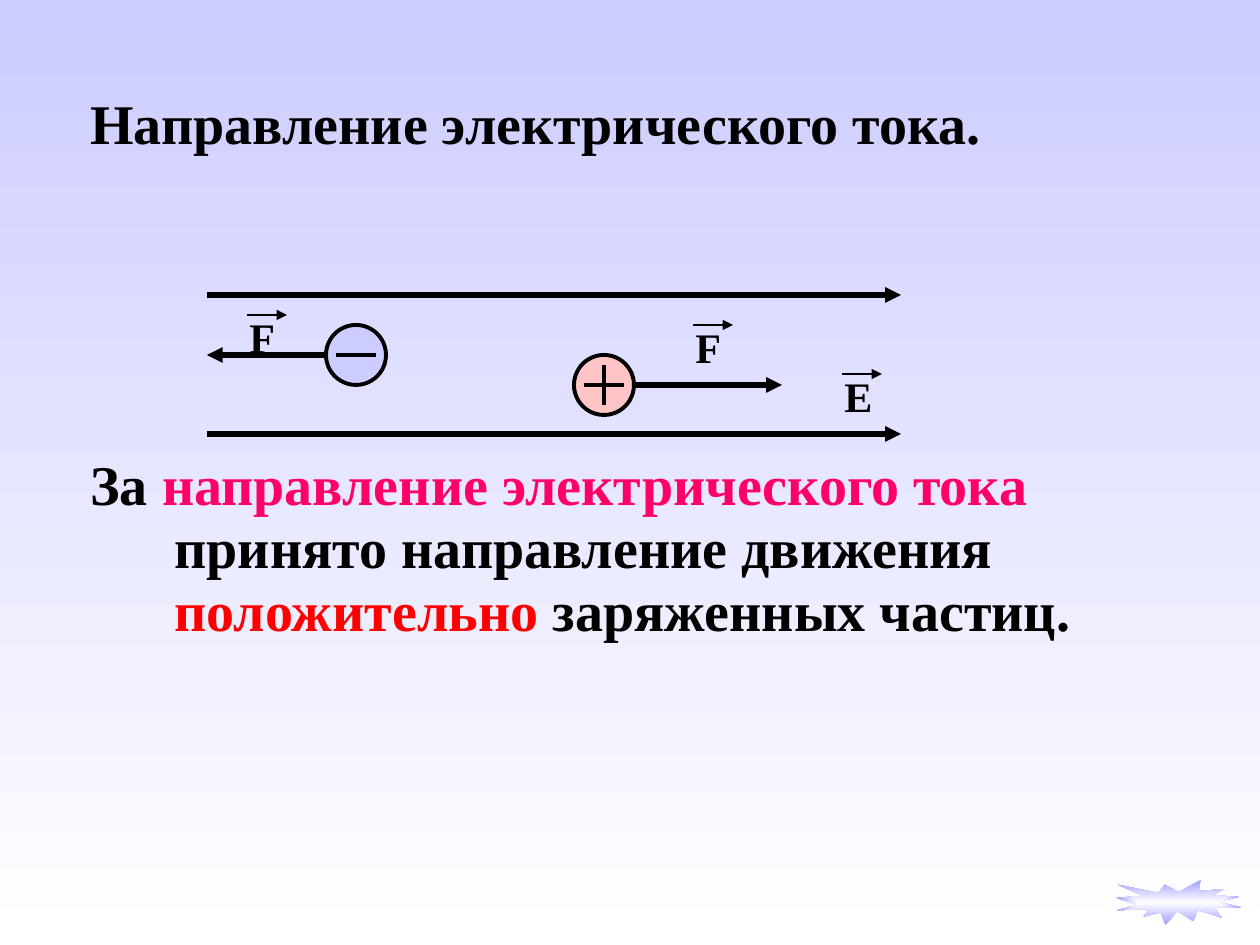
from pptx import Presentation
from pptx.util import Pt
from pptx.dml.color import RGBColor
from pptx.enum.shapes import MSO_SHAPE, MSO_CONNECTOR
from pptx.oxml.ns import qn
from lxml.etree import SubElement

PX = 914400 // 126
FONT = "Times New Roman"
BLACK = "000000"

# Content: paragraphs as (space before in pt, runs)
TEXT = [
    (6, [("Направление электрического тока.", BLACK)]),
    (170, [("За ", BLACK),
           ("направление электрического тока", "FF0066"),
           (" принято направление движения ", BLACK),
           ("положительно", "FF0000"),
           (" заряженных частиц.", BLACK)]),
]
FIELD = [295, 434]  # y of the field lines
# Charges: left, top, fill, sign, x where the force ends
SIZE, ARM = 60, 20
CHARGES = [(326, 325, "CCCCFF", "-", 207), (574, 355, "FFC5C6", "+", 782)]
# Vector labels: letter, left, top
LABELS = [("Е", 832, 364), ("F", 683, 315), ("F", 237, 305)]

deck = Presentation()
deck.slide_width, deck.slide_height = 1260 * PX, 945 * PX
slide = deck.slides.add_slide(deck.slide_layouts[6])
shapes = slide.shapes


def paint(color, code):
    color.rgb = RGBColor.from_string(code)


def blend(fill, first, last):
    fill.gradient()
    for stop, code, pos in zip(fill.gradient_stops, (first, last), (0, 1)):
        paint(stop.color, code)
        stop.position = pos


def line(x1, y1, x2, y2, width, arrow=False):
    item = shapes.add_connector(MSO_CONNECTOR.STRAIGHT,
                                x1 * PX, y1 * PX, x2 * PX, y2 * PX)
    paint(item.line.color, BLACK)
    item.line.width = Pt(width)
    if arrow:
        SubElement(item.line._get_or_add_ln(), qn("a:tailEnd"), type="triangle")
    SubElement(item._element.spPr, qn("a:effectLst"))


def frame(x, y, w, h, wrap=True):
    body = shapes.add_textbox(x * PX, y * PX, w * PX, h * PX).text_frame
    body.word_wrap = wrap
    return body


def write(para, text, size, code):
    run = para.add_run()
    run.text = text
    run.font.name, run.font.size, run.font.bold = FONT, Pt(size), True
    paint(run.font.color, code)


# Background
blend(slide.background.fill, "CCCCFF", "FFFFFF")
slide.background.fill.gradient_angle = 270

# Title and definition
body = frame(78, 88, 1131, 527)
for i, (gap, runs) in enumerate(TEXT):
    para = body.add_paragraph() if i else body.paragraphs[0]
    para.line_spacing, para.space_before = 0.94, Pt(gap)
    props = para._p.get_or_add_pPr()
    props.set("marL", str(84 * PX))
    props.set("indent", str(-84 * PX))
    for text, code in runs:
        write(para, text, 32, code)

# Field lines
for y in FIELD:
    line(207, y, 901, y, 3, True)

# Charges with their signs and forces
for x, y, code, sign, end in CHARGES:
    ball = shapes.add_shape(MSO_SHAPE.OVAL, x * PX, y * PX, SIZE * PX, SIZE * PX)
    ball.shadow.inherit = False
    ball.fill.solid()
    paint(ball.fill.fore_color, code)
    paint(ball.line.color, BLACK)
    ball.line.width = Pt(2.25)
    cx, cy = x + SIZE // 2, y + SIZE // 2
    line(cx - ARM, cy, cx + ARM, cy, 2.25)
    if sign == "+":
        line(cx, cy - ARM, cx, cy + ARM, 2.25)
    line(x if end < x else x + SIZE, cy, end, cy, 3, True)

# Vector labels, each under a small arrow
for text, x, y in LABELS:
    write(frame(x, y, 51, 63, False).paragraphs[0], text, 24, BLACK)
    line(x + 10, y + 10, x + 50, y + 10, 1.5, True)

# Star in the corner
star = shapes.add_shape(MSO_SHAPE.EXPLOSION1, 1116 * PX, 880 * PX, 126 * PX, 45 * PX)
star.shadow.inherit = False
star.line.fill.background()
blend(star.fill, "FFFFFF", "A1A1FF")
grad = star._element.spPr.find(qn("a:gradFill"))
grad.remove(grad.find(qn("a:lin")))
way = SubElement(grad, qn("a:path"), path="shape")
SubElement(way, qn("a:fillToRect"), l="50000", t="50000", r="50000", b="50000")

deck.save("out.pptx")
